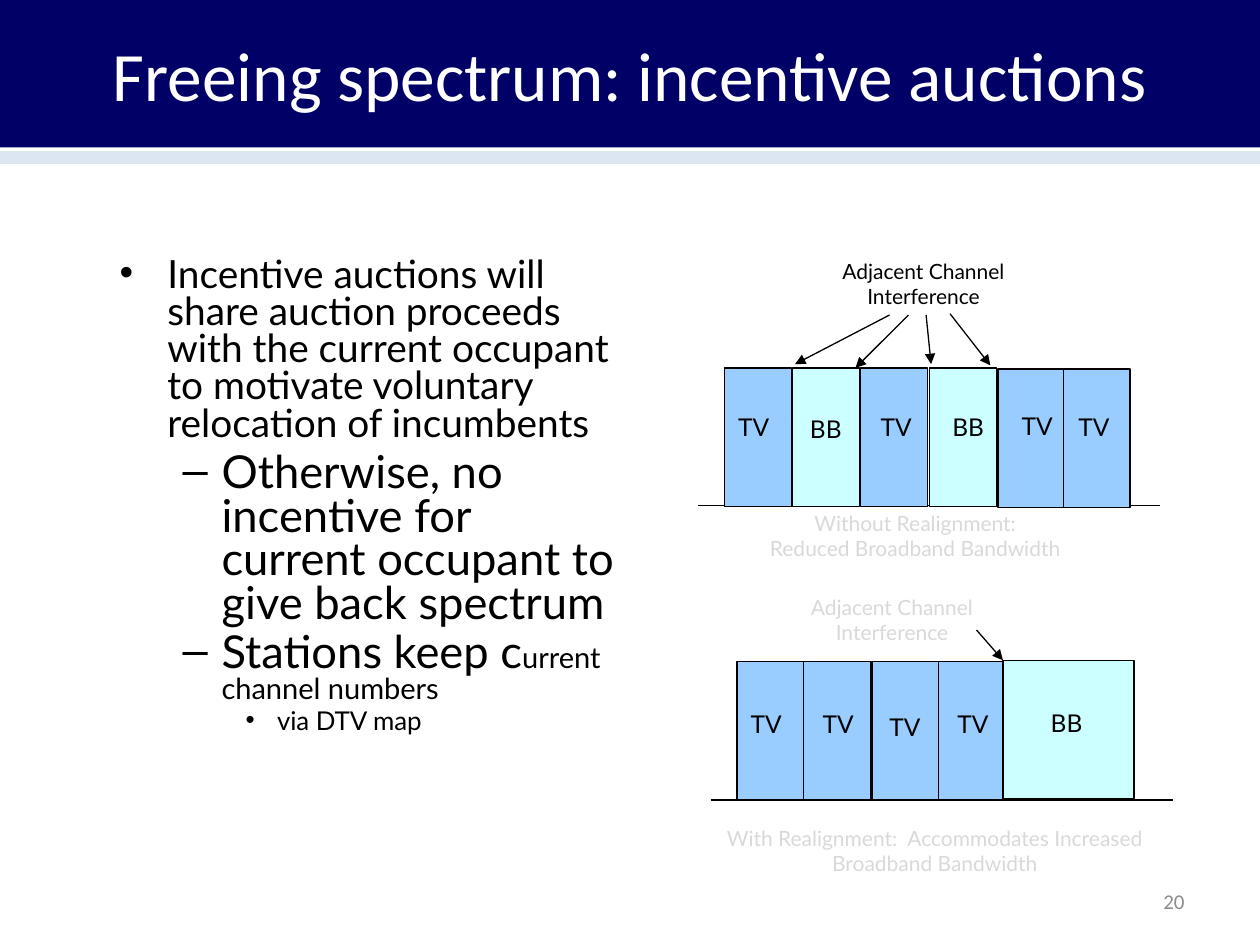
from dataclasses import dataclass
from pptx import Presentation
from pptx.dml.color import RGBColor
from pptx.enum.shapes import MSO_CONNECTOR, MSO_SHAPE
from pptx.enum.text import MSO_ANCHOR, PP_ALIGN
from pptx.oxml.ns import qn
from pptx.util import Inches, Pt
from lxml.etree import SubElement

LINE, RECT = MSO_CONNECTOR.STRAIGHT, MSO_SHAPE.RECTANGLE
TOP, MID = MSO_ANCHOR.TOP, MSO_ANCHOR.MIDDLE
LEFT, MIDST, RIGHT = PP_ALIGN.LEFT, PP_ALIGN.CENTER, PP_ALIGN.RIGHT
WIDE, HIGH = Inches(10), Inches(7.5)
COLS, ROWS = 100, 75


@dataclass(frozen=True)
class Theme:
    navy: str = "000066"
    pale: str = "DCE6F2"
    ink: str = "000000"
    white: str = "FFFFFF"
    faint: str = "D9D9D9"
    gray: str = "8C8C8C"
    blue: str = "99CCFF"
    aqua: str = "CCFFFF"
    head: str = "Calibri"
    text: str = "Lato"
    title: float = 39.6
    lead: float = 22.2
    sub: float = 25.9
    small: float = 16.6
    leaf: float = 14.8
    label: float = 14
    note: float = 12
    thin: float = 0.75
    thick: float = 8


LOOK = Theme()
FILLS = {"TV": LOOK.blue, "BB": LOOK.aqua}

POINTS = [
    (0, "•", [("Incentive auctions will share auction proceeds with the current "
               "occupant to motivate voluntary relocation of incumbents", LOOK.lead)]),
    (1, "–", [("Otherwise, no incentive for current occupant to give back spectrum",
               LOOK.sub)]),
    (1, "–", [("Stations keep c", LOOK.sub), ("urrent channel numbers", LOOK.small)]),
    (2, "•", [("via DTV map", LOOK.leaf)]),
]
INDENTS = [(0.38, 0.38), (0.81, 0.31), (1.25, 0.25)]

# name, box left, box top, box width, label left, label top
MIXED = [
    ("TV", 57.5, 29.2, 5.3, 57.6, 32.2),
    ("TV", 68.3, 29.2, 5.3, 68.9, 32.2),
    ("TV", 79.2, 29.3, 5.3, 80.1, 32.1),
    ("TV", 84.4, 29.3, 5.3, 84.6, 32.2),
    ("BB", 62.9, 29.2, 5.3, 63.3, 32.4),
    ("BB", 73.8, 29.2, 5.3, 74.6, 32.2),
]
SORTED = [
    ("TV", 58.5, 52.5, 5.3, 58.6, 55.8),
    ("TV", 63.8, 52.5, 5.3, 64.3, 55.8),
    ("TV", 74.3, 52.5, 5.3, 75, 55.8),
    ("BB", 79.6, 52.4, 10.4, 82.4, 55.7),
    ("TV", 69.2, 52.5, 5.3, 69.6, 56),
]
ARROWS = [
    (70.6, 25, 63.1, 28.9),
    (72.1, 25, 67.9, 29.2),
    (73.5, 25, 73.9, 28.9),
    (75.4, 24.9, 78.6, 29),
    (77.5, 50, 79.6, 52.4),
]


def put(item, **form):
    for name, value in form.items():
        setattr(item, name, value)


def place(*spots):
    units = (WIDE / COLS, HIGH / ROWS)
    return [round(spot * units[i % 2]) for i, spot in enumerate(spots)]


def write(para, words, size, color, font):
    run = para.add_run()
    put(run, text=words)
    put(run.font, size=Pt(size), name=font)
    run.font.color.rgb = RGBColor.from_string(color)


def frame(slide, spot, anchor=TOP, wrap=True):
    body = slide.shapes.add_textbox(*place(*spot)).text_frame
    put(body, word_wrap=wrap, vertical_anchor=anchor)
    return body


def label(slide, spot, words, size=LOOK.note, color=LOOK.ink, font=LOOK.text,
          align=MIDST, anchor=TOP, wrap=True):
    body = frame(slide, spot, anchor, wrap)
    for i, part in enumerate(words.split("\n")):
        para = body.add_paragraph() if i else body.paragraphs[0]
        put(para, alignment=align)
        write(para, part, size, color, font)


def block(slide, spot, fill, edge=None):
    box = slide.shapes.add_shape(RECT, *place(*spot))
    put(box.shadow, inherit=False)
    box.fill.solid()
    box.fill.fore_color.rgb = RGBColor.from_string(fill)
    if edge:
        box.line.color.rgb = RGBColor.from_string(edge)
        put(box.line, width=Pt(LOOK.thin))
    else:
        box.line.fill.background()


def rule(slide, ends, color=LOOK.ink, width=LOOK.thin, arrow=False):
    line = slide.shapes.add_connector(LINE, *place(*ends))
    line.line.color.rgb = RGBColor.from_string(color)
    put(line.line, width=Pt(width))
    if arrow:
        SubElement(line.line._get_or_add_ln(), qn("a:tailEnd"), type="triangle")
    SubElement(line._element.spPr, qn("a:effectLst"))


def bullet(para, level, mark):
    left, hang = INDENTS[level]
    props = para._p.get_or_add_pPr()
    props.set("marL", str(Inches(left)))
    props.set("indent", str(-Inches(hang)))
    SubElement(props, qn("a:buFont"), typeface="Arial")
    SubElement(props, qn("a:buChar"), char=mark)


def outline(slide, spot):
    body = frame(slide, spot)
    for i, (level, mark, runs) in enumerate(POINTS):
        para = body.add_paragraph() if i else body.paragraphs[0]
        gap = Pt(round(runs[-1][1] * 0.2, 1))
        put(para, level=level, line_spacing=0.8, space_before=gap, alignment=LEFT)
        bullet(para, level, mark)
        for words, size in runs:
            write(para, words, size, LOOK.ink, LOOK.text)


def band(slide, axis, cells):
    rule(slide, axis)
    for name, left, top, width, *spot in cells:
        block(slide, (left, top, width, 11), FILLS[name], LOOK.ink)
    for name, left, top, width, *spot in cells:
        label(slide, (*spot, 9.1, 3.3), name, LOOK.label, align=LEFT)


def main():
    deck = Presentation()
    put(deck, slide_width=WIDE, slide_height=HIGH)
    slide = deck.slides.add_slide(deck.slide_layouts[6])
    block(slide, (0, -0.8, COLS, 12.5), LOOK.navy)
    rule(slide, (0, 12.5, COLS, 12.5), LOOK.pale, LOOK.thick)
    label(slide, (5, -0.4, 90, 12.5), "Freeing spectrum: incentive auctions",
          LOOK.title, LOOK.white, LOOK.head, anchor=MID)
    outline(slide, (8.5, 20, 41.5, 43.3))
    label(slide, (71.7, 69.5, 23.3, 4), "20", color=LOOK.gray, font=LOOK.head,
          align=RIGHT, anchor=MID)
    band(slide, (55.4, 40.1, 92.1, 40.1), MIXED)
    band(slide, (56.4, 63.5, 93.1, 63.5), SORTED)
    for ends in ARROWS:
        rule(slide, ends, arrow=True)
    for spot, color in (((65.8, 20), LOOK.ink), ((63.3, 46.7), LOOK.faint)):
        label(slide, (*spot, 15, 5.1), "Adjacent Channel\nInterference",
              color=color, wrap=False)
    label(slide, (60, 40, 25.3, 5.1),
          "Without Realignment:\nReduced Broadband Bandwidth",
          color=LOOK.faint, wrap=False)
    label(slide, (56.7, 65, 35, 5.1),
          "With Realignment:  Accommodates Increased Broadband Bandwidth",
          color=LOOK.faint)
    deck.save("out.pptx")


if __name__ == "__main__":
    main()
